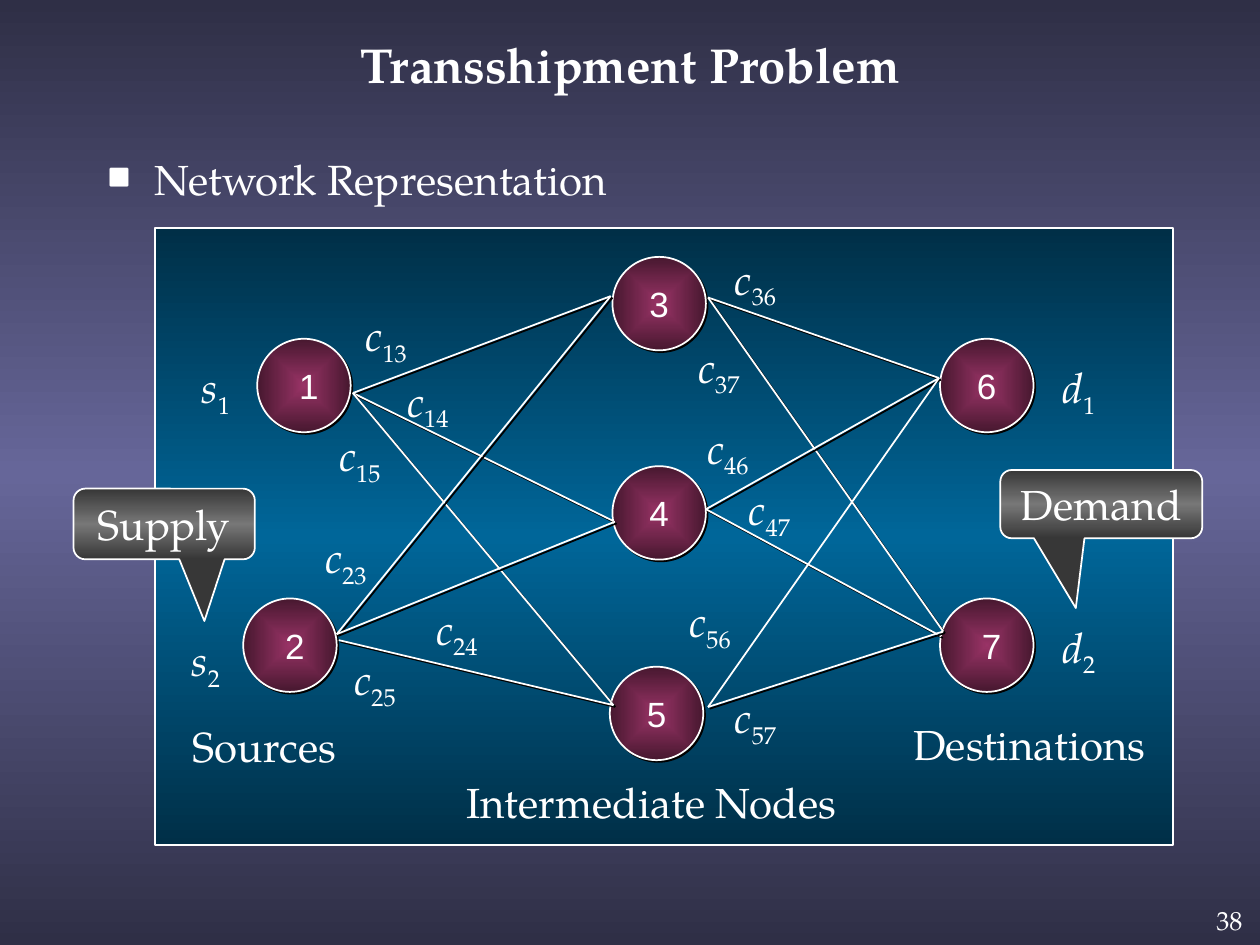
import pptx
import pptx.util
import pptx.dml.color
import pptx.enum.shapes
import pptx.enum.text
import pptx.oxml
import pptx.oxml.ns

Pt = pptx.util.Pt
SHAPE = pptx.enum.shapes.MSO_SHAPE
ALIGN = pptx.enum.text.PP_ALIGN
ANCHOR = pptx.enum.text.MSO_ANCHOR
qn = pptx.oxml.ns.qn

COLORS = {
    "text": "FFFFFF", "shadow": "000000",
    "backdrop_edge": "2F2F46", "backdrop": "666699",
    "panel_edge": "002F47", "panel": "006699",
    "node_edge": "47182F", "node": "993366",
    "callout_edge": "373737", "callout": "777777",
}
SERIF = "TeX Gyre Pagella"

TITLE = ("Transshipment Problem", (54, 4.3, 612, 64.1))
TOPIC = ("Network Representation", (54, 87.1, 391, 43.9))
PAGE_NUMBER = ("38", (674.6, 512, 42.5, 28))
PANEL = (88.6, 130.3, 581.8, 352.8)

DIAMETER = 53.4
NODES = {
    "1": (147, 193.6), "2": (139, 342),
    "3": (350, 146.8), "4": (350, 266.4), "5": (348.5, 381),
    "6": (537.2, 193.6), "7": (537.2, 342),
}
SHIFTED_NODES = "127"
EXITS = {
    "1": (201.6, 224.6), "2": (192.4, 362.4),
    "3": (404.6, 170), "4": (403.4, 291), "5": (404.6, 404),
}
ENTRIES = {
    "3": (349, 169.2), "4": (350.6, 297.8), "5": (350.6, 403),
    "6": (536.6, 216), "7": (539, 360.8),
}
LINKS = {
    "13": (199.4, 172), "14": (223.2, 209.5), "15": (184.3, 240.5),
    "23": (176.4, 298.8), "24": (239.8, 339.8), "25": (193, 368.6),
    "36": (410.4, 139.7), "37": (389.5, 190), "46": (394.6, 236.2),
    "47": (418.3, 271.4), "56": (384.5, 335.5), "57": (410.4, 390.2),
}
EXIT_SHIFTS = {"25": (1.2, 3.4)}
ENTRY_SHIFTS = {"47": (-1.2, 2.8), "24": (0.8, 0.3)}
FLAT_LINKS = ["56"]

QUANTITIES = [
    ("s", "1", (105.8, 201.6, 36)), ("s", "2", (100, 357.8, 36)),
    ("d", "1", (597.6, 201.6, 38.9)), ("d", "2", (597.6, 350, 38.9)),
]
STAGES = [
    ("Intermediate Nodes", (257, 438.5, 231)),
    ("Sources", (100.8, 406.8, 100.8)),
    ("Destinations", (512.6, 405.4, 152)),
]
CALLOUTS = [
    ("Demand", (571.6, 268.6, 115.4, 39), (-0.126, 1.522, 0.167)),
    ("Supply", (42, 279.2, 103.6, 40.4), (0.222, 1.373, 0.167)),
]
LABEL_HEIGHT = 38.2
COST_WIDTH = 44.6

TIGHT = {"margin_left": Pt(9.4), "margin_right": Pt(9.4), "margin_top": Pt(5),
         "margin_bottom": Pt(5), "word_wrap": False}
CENTERED = {"vertical_anchor": ANCHOR.MIDDLE}
FIXED = {"auto_size": pptx.enum.text.MSO_AUTO_SIZE.NONE, "word_wrap": True}


def rgb(name):
    return pptx.dml.color.RGBColor.from_string(COLORS[name])


def apply(target, formats):
    for name, value in formats.items():
        setattr(target, name, value)


def points(values):
    return [Pt(value) for value in values]


def xml(markup):
    head, rest = markup.split(">", 1)
    closing = "/" if head.endswith("/") else ""
    return pptx.oxml.parse_xml(
        f"{head.rstrip('/')} {pptx.oxml.ns.nsdecls('a')}{closing}>{rest}")


def paint(owner, fill, stops, direction):
    fill.solid()
    solid = next(owner.iter(qn("a:solidFill")))
    marks = "".join(
        f'<a:gs pos="{position * 1000}"><a:srgbClr val="{COLORS[name]}"/></a:gs>'
        for position, name in stops)
    solid.getparent().replace(
        solid, xml(f"<a:gradFill><a:gsLst>{marks}</a:gsLst>{direction}</a:gradFill>"))


def paint_bands(owner, fill, name):
    edge = name + "_edge"
    paint(owner, fill, [(0, edge), (50, name), (100, edge)],
          '<a:lin ang="5400000" scaled="0"/>')


def outline(item, shadowed=False):
    item.line.color.rgb = rgb("text")
    item.line.width = Pt(1)
    effect = (f'<a:outerShdw blurRad="0" dist="{Pt(1.4)}" dir="2700000">'
              f'<a:srgbClr val="{COLORS["shadow"]}"/></a:outerShdw>') if shadowed else ""
    item.element.spPr.append(xml(f"<a:effectLst>{effect}</a:effectLst>"))


def write(frame, text, formats, size=24, font=SERIF, align=ALIGN.LEFT, subscript="",
          bold=False):
    apply(frame, formats)
    paragraph = frame.paragraphs[0]
    paragraph.alignment = align
    for part in filter(None, (text, subscript)):
        run = paragraph.add_run()
        run.text = part
        apply(run.font, {"size": Pt(size), "name": font, "bold": bold,
                         "italic": bool(subscript) and part == text})
        run.font.color.rgb = rgb("text")
    if subscript:
        run._r.get_or_add_rPr().set("baseline", "-25000")
    return paragraph


def add_label(slide, text, place, subscript=""):
    label = slide.shapes.add_textbox(*points((*place, LABEL_HEIGHT)))
    write(label.text_frame, text, TIGHT, subscript=subscript)


def add_heading(slide):
    for holder, (text, box) in zip(slide.placeholders, (TITLE, TOPIC)):
        apply(holder, dict(zip(("left", "top", "width", "height"), points(box))))
    title, topic = slide.placeholders
    write(title.text_frame, TITLE[0], {**FIXED, **CENTERED}, 28,
          align=ALIGN.CENTER, bold=True)
    bullet = write(topic.text_frame, TOPIC[0], FIXED)
    apply(bullet, {"line_spacing": 0.9, "space_before": Pt(4.8)})
    properties = bullet._p.get_or_add_pPr()
    apply(properties, {"marL": Pt(27), "indent": Pt(-27)})
    for markup in (f'<a:buClr><a:srgbClr val="{COLORS["text"]}"/></a:buClr>',
                   '<a:buSzPct val="75000"/>', f'<a:buFont typeface="{SERIF}"/>',
                   '<a:buChar char="■"/>'):
        properties.append(xml(markup))


def add_nodes(slide):
    for number, place in NODES.items():
        node = slide.shapes.add_shape(
            SHAPE.OVAL, *points((*place, DIAMETER, DIAMETER)))
        paint(node.element, node.fill, [(0, "node"), (100, "node_edge")],
              '<a:path path="shape"><a:fillToRect l="50000" t="50000" '
              'r="50000" b="50000"/></a:path>')
        outline(node, True)
        write(node.text_frame, number, {**TIGHT, **CENTERED}, 20, "Arial", ALIGN.CENTER)
        if number in SHIFTED_NODES:
            node.text_frame.margin_left = Pt(15)


def add_links(slide):
    for link in LINKS:
        ends = []
        for port, shifts in ((EXITS[link[0]], EXIT_SHIFTS),
                             (ENTRIES[link[1]], ENTRY_SHIFTS)):
            ends += [a + b for a, b in zip(port, shifts.get(link, (0, 0)))]
        line = slide.shapes.add_connector(
            pptx.enum.shapes.MSO_CONNECTOR.STRAIGHT, *points(ends))
        outline(line, link not in FLAT_LINKS)


def main():
    deck = pptx.Presentation()
    apply(deck, {"slide_width": Pt(720), "slide_height": Pt(540)})
    slide = deck.slides.add_slide(deck.slide_layouts[1])
    paint_bands(slide.element, slide.background.fill, "backdrop")
    add_heading(slide)

    number, box = PAGE_NUMBER
    page = slide.shapes.add_textbox(*points(box))
    write(page.text_frame, number, {"word_wrap": True, **CENTERED}, 15,
          align=ALIGN.RIGHT)

    panel = slide.shapes.add_shape(SHAPE.RECTANGLE, *points(PANEL))
    paint_bands(panel.element, panel.fill, "panel")
    outline(panel)
    add_nodes(slide)
    add_links(slide)

    for link, place in LINKS.items():
        add_label(slide, "c", (*place, COST_WIDTH), link)
    for symbol, index, place in QUANTITIES:
        add_label(slide, symbol, place, index)
    for stage, place in STAGES:
        add_label(slide, stage, place)

    for text, box, pointer in CALLOUTS:
        callout = slide.shapes.add_shape(SHAPE.ROUNDED_RECTANGULAR_CALLOUT, *points(box))
        for index, value in enumerate(pointer):
            callout.adjustments[index] = value
        paint_bands(callout.element, callout.fill, "callout")
        outline(callout)
        write(callout.text_frame, text, CENTERED, align=ALIGN.CENTER)

    deck.save("out.pptx")


if __name__ == "__main__":
    main()
